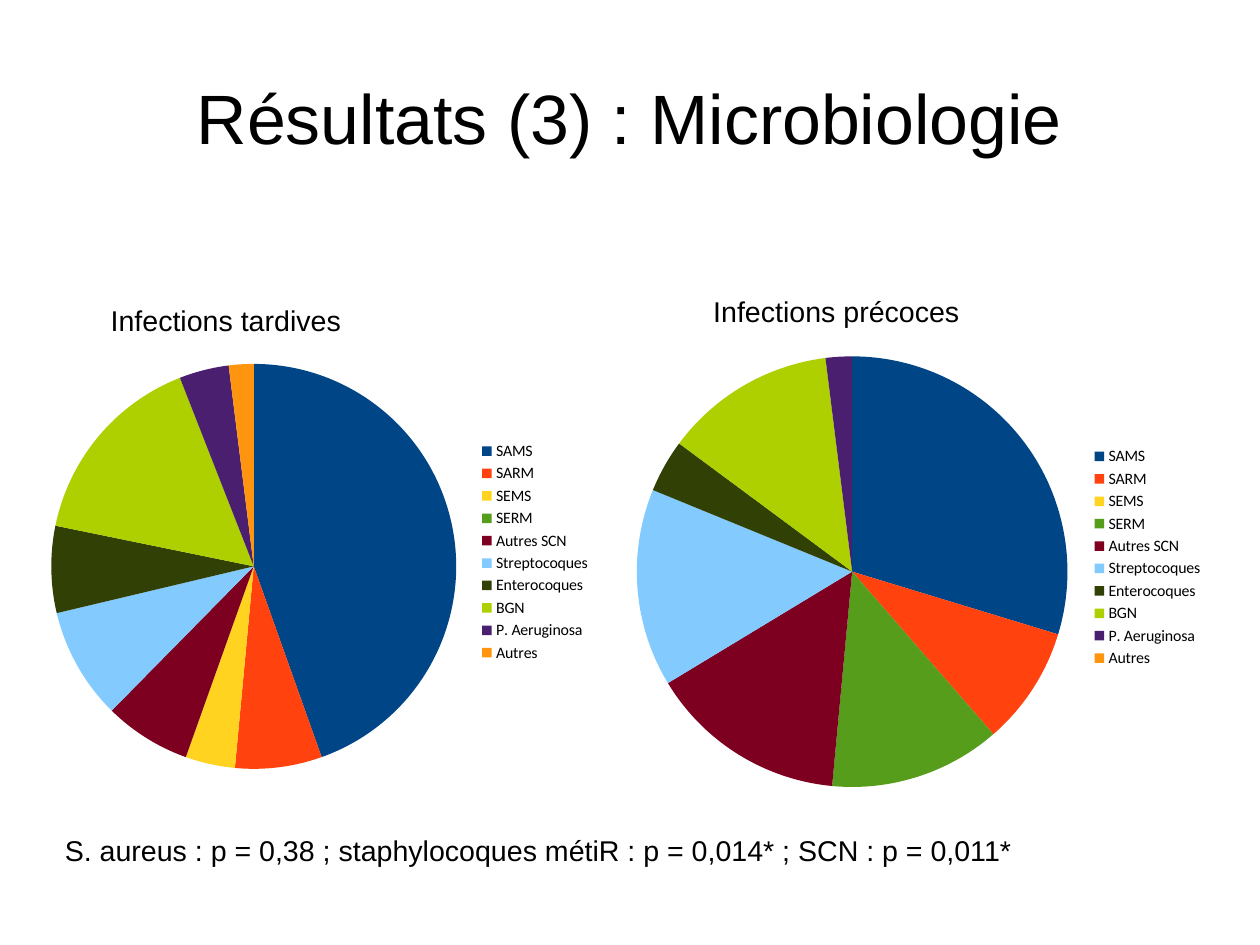
from lxml import etree
from pptx import Presentation
from pptx.chart import data
from pptx.dml import color
from pptx.enum import chart as ec, text
from pptx.oxml import ns
from pptx.util import Cm, Pt

COLOURS = {
    "SAMS": "004586",
    "SARM": "FF420E",
    "SEMS": "FFD320",
    "SERM": "579D1C",
    "Autres SCN": "7E0021",
    "Streptocoques": "83CAFF",
    "Enterocoques": "314004",
    "BGN": "AECF00",
    "P. Aeruginosa": "4B1F6F",
    "Autres": "FF950E",
    "text": "000000",
}
GERMS = [name for name in COLOURS if name != "text"]

HEADING = "Résultats (3) : Microbiologie"
INFECTIONS = [
    {"caption": "Infections tardives", "caption_at": (2.21, 6.6, 9.2, 0.97),
     "pie_at": (0.89, 5.79, 12.5, 12.95), "plot_width": 0.72,
     "shares": (45, 7, 4, 0, 7, 9, 7, 16, 4, 2)},
    {"caption": "Infections précoces", "caption_at": (15.6, 6.4, 9.2, 0.97),
     "pie_at": (13.89, 5.97, 13.11, 12.83), "plot_width": 0.73,
     "shares": (30, 9, 0, 13, 15, 15, 4, 13, 2, 0)},
]
P_VALUES = "S. aureus : p = 0,38 ; staphylocoques métiR : p = 0,014* ; SCN : p = 0,011*"
P_VALUES_AT = (1.19, 18.39, 25.2, 0.97)


def box(lengths):
    return [Cm(length) for length in lengths]


def style(font, size, name):
    font.size, font.name = Pt(size), name
    font.color.rgb = color.RGBColor.from_string(COLOURS["text"])


def add_label(slide, wording, at):
    frame = slide.shapes.add_textbox(*box(at)).text_frame
    frame.word_wrap = True
    frame.auto_size = text.MSO_AUTO_SIZE.SHAPE_TO_FIT_TEXT
    frame.text = wording
    style(frame.paragraphs[0].font, 18, "Arial")


def place_plot(pie, x, y, w, h):
    area = pie.element.find(".//" + ns.qn("c:plotArea"))
    for layout in area.findall(ns.qn("c:layout")):
        area.remove(layout)
    layout = etree.Element(ns.qn("c:layout"))
    manual = etree.SubElement(layout, ns.qn("c:manualLayout"))
    settings = {"layoutTarget": "outer", "xMode": "edge", "yMode": "edge",
                "x": x, "y": y, "w": w, "h": h}
    for tag, value in settings.items():
        etree.SubElement(manual, ns.qn("c:" + tag)).set("val", str(value))
    area.insert(0, layout)


def add_pie(slide, infection):
    shares = data.CategoryChartData()
    shares.categories = GERMS
    shares.add_series("Series 1", infection["shares"])
    pie = slide.shapes.add_chart(
        ec.XL_CHART_TYPE.PIE, *box(infection["pie_at"]), shares).chart
    style(pie.font, 10, "Calibri")
    pie.has_title = False
    pie.has_legend = True
    pie.legend.position = ec.XL_LEGEND_POSITION.RIGHT
    pie.legend.include_in_layout = False
    style(pie.legend.font, 10, "Calibri")
    plot = pie.plots[0]
    plot.vary_by_categories = True
    for index, germ in enumerate(GERMS):
        slice_format = plot.series[0].points[index].format
        slice_format.fill.solid()
        slice_format.fill.fore_color.rgb = color.RGBColor.from_string(COLOURS[germ])
        slice_format.line.fill.background()
    place_plot(pie, 0.02, 0.07, infection["plot_width"], 0.91)


def main():
    deck = Presentation()
    deck.slide_width, deck.slide_height = Cm(28), Cm(21)
    slide = deck.slides.add_slide(deck.slide_layouts[5])

    heading = slide.shapes.title
    heading.left, heading.top, heading.width, heading.height = box((1.4, 0.84, 25.2, 3.5))
    frame = heading.text_frame
    frame.margin_left = frame.margin_right = frame.margin_top = frame.margin_bottom = 0
    frame.vertical_anchor = text.MSO_ANCHOR.MIDDLE
    frame.text = HEADING
    frame.paragraphs[0].alignment = text.PP_ALIGN.CENTER
    style(frame.paragraphs[0].font, 44, "Arial")

    for infection in INFECTIONS:
        add_pie(slide, infection)
    for infection in INFECTIONS:
        add_label(slide, infection["caption"], infection["caption_at"])
    add_label(slide, P_VALUES, P_VALUES_AT)
    deck.save("out.pptx")


if __name__ == "__main__":
    main()
